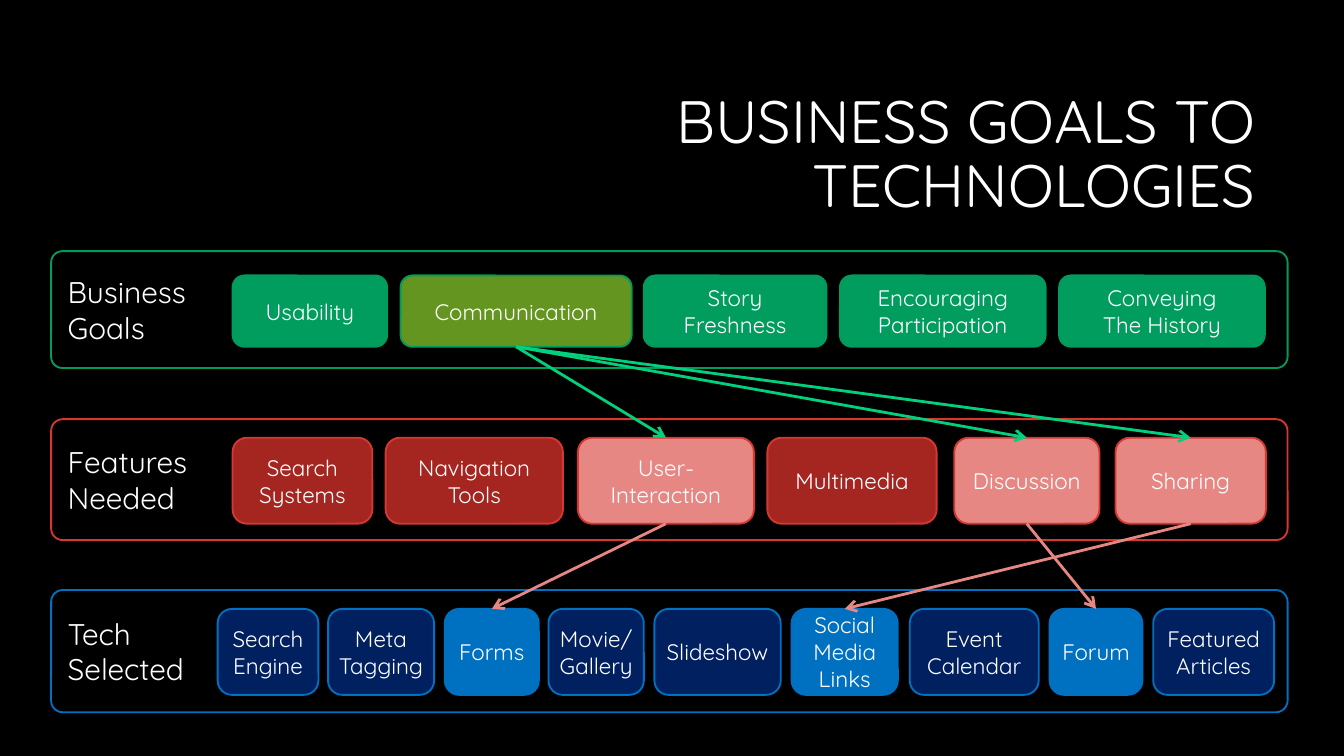
"""Build a slide that maps business goals to features and technologies."""
from dataclasses import dataclass

from lxml import etree
from pptx import Presentation
from pptx.dml.color import RGBColor
from pptx.enum import shapes, text
from pptx.oxml import ns
from pptx.util import Pt

FONT = "Quicksand"
BLACK = RGBColor(0x00, 0x00, 0x00)
WHITE = RGBColor(0xFF, 0xFF, 0xFF)
GREEN = RGBColor(0x01, 0x9D, 0x5E)
GREEN_LINE = RGBColor(0x01, 0x9B, 0x5C)
OLIVE = RGBColor(0x63, 0x95, 0x20)
MINT = RGBColor(0x01, 0xD1, 0x7D)
RED = RGBColor(0xA5, 0x26, 0x21)
RED_LINE = RGBColor(0xD6, 0x37, 0x31)
PINK = RGBColor(0xE6, 0x87, 0x83)
NAVY = RGBColor(0x00, 0x20, 0x60)
BLUE = RGBColor(0x00, 0x70, 0xC0)

FRAME_LEFT, FRAME_WIDTH = 27.4, 662.4
BOTTOM, TOP = 2, 0


@dataclass(frozen=True)
class Box:
    label: str
    left: float
    width: float
    selected: bool = False


@dataclass(frozen=True)
class Row:
    label: str
    top: float
    height: float
    box_top: float
    box_height: float
    inset: float
    line: RGBColor
    fill: RGBColor
    selected_fill: RGBColor
    boxes: tuple[Box, ...]


@dataclass(frozen=True)
class Link:
    source: str
    target: str
    color: RGBColor


ROWS = (
    Row("Business\nGoals", 134.6, 62.6, 147.6, 38.2, 7.2, GREEN_LINE, GREEN, OLIVE, (
        Box("Usability", 124.6, 82.8),
        Box("Communication", 214.6, 123.8, True),
        Box("Story\nFreshness", 344.9, 97.9),
        Box("Encouraging Participation", 450, 110.2),
        Box("Conveying\nThe History", 567.4, 110.2),
    )),
    Row("Features\nNeeded", 224.6, 64.8, 234.5, 46.1, 7.2, RED_LINE, RED, PINK, (
        Box("Search\nSystems", 124.6, 74.9),
        Box("Navigation\nTools", 206.6, 95),
        Box("User-Interaction", 309.6, 94.3, True),
        Box("Multimedia", 411.1, 90.7),
        Box("Discussion", 511.2, 77.8, True),
        Box("Sharing", 597.6, 80.6, True),
    )),
    Row("Tech\nSelected", 316.1, 65.5, 326.2, 46.1, 0, BLUE, NAVY, BLUE, (
        Box("Search Engine", 116.6, 54),
        Box("Meta\nTagging", 175.7, 56.9),
        Box("Forms", 238.3, 50.4, True),
        Box("Movie/\nGallery", 293.8, 51.1),
        Box("Slideshow", 350.6, 67.7),
        Box("Social Media\nLinks", 424.1, 56.9, True),
        Box("Event\nCalendar", 487.4, 69.1),
        Box("Forum", 562.3, 49.7, True),
        Box("Featured\nArticles", 617.8, 64.8),
    )),
)

LINKS = (
    Link("Communication", "User-Interaction", MINT),
    Link("Communication", "Discussion", MINT),
    Link("Communication", "Sharing", MINT),
    Link("User-Interaction", "Forms", PINK),
    Link("Discussion", "Forum", PINK),
    Link("Sharing", "Social Media\nLinks", PINK),
)


def write_text(shape, label: str, size: float, alignment, inset: float = 7.2) -> None:
    """Fill a shape with vertically centred white text."""
    frame = shape.text_frame
    frame.word_wrap = True
    frame.vertical_anchor = text.MSO_ANCHOR.MIDDLE
    frame.margin_left = frame.margin_right = Pt(inset)
    frame.margin_top = frame.margin_bottom = Pt(3.6)
    frame.text = label
    for paragraph in frame.paragraphs:
        paragraph.alignment = alignment
        paragraph.font.name = FONT
        paragraph.font.size = Pt(size)
        paragraph.font.color.rgb = WHITE


def add_rounded(slide, left: float, top: float, width: float, height: float, line: RGBColor):
    """Add a rounded rectangle with a thin outline and no shadow."""
    shape = slide.shapes.add_shape(
        shapes.MSO_SHAPE.ROUNDED_RECTANGLE, Pt(left), Pt(top), Pt(width), Pt(height))
    shape.shadow.inherit = False
    shape.line.color.rgb = line
    shape.line.width = Pt(1)
    return shape


def add_row(slide, row: Row) -> dict:
    """Draw a framed row and return its boxes by label."""
    frame = add_rounded(slide, FRAME_LEFT, row.top, FRAME_WIDTH, row.height, row.line)
    frame.adjustments[0] = 0.096
    frame.fill.background()
    write_text(frame, row.label, 16, text.PP_ALIGN.LEFT)
    drawn = {}
    for box in row.boxes:
        shape = add_rounded(slide, box.left, row.box_top, box.width, row.box_height, row.line)
        shape.fill.solid()
        shape.fill.fore_color.rgb = row.selected_fill if box.selected else row.fill
        write_text(shape, box.label, 12, text.PP_ALIGN.CENTER, row.inset)
        drawn[box.label] = shape
    return drawn


def add_link(slide, link: Link, boxes: dict) -> None:
    """Draw an arrow from the bottom of one box to the top of another."""
    connector = slide.shapes.add_connector(shapes.MSO_CONNECTOR.STRAIGHT, 0, 0, 0, 0)
    connector.begin_connect(boxes[link.source], BOTTOM)
    connector.end_connect(boxes[link.target], TOP)
    connector.line.color.rgb = link.color
    connector.line.width = Pt(1.5)
    etree.SubElement(connector.line._get_or_add_ln(), ns.qn("a:tailEnd"), type="arrow")
    etree.SubElement(connector._element.spPr, ns.qn("a:effectLst"))


def add_title(slide) -> None:
    """Add the right-aligned slide title."""
    title = slide.shapes.add_textbox(Pt(171.4), Pt(45.4), Pt(508.3), Pt(76.3))
    write_text(title, "BUSINESS GOALS TO TECHNOLOGIES", 32, text.PP_ALIGN.RIGHT)
    title.text_frame.paragraphs[0].line_spacing = 0.9


def main() -> None:
    """Build and save the presentation."""
    presentation = Presentation()
    presentation.slide_width, presentation.slide_height = Pt(720), Pt(405)
    slide = presentation.slides.add_slide(presentation.slide_layouts[6])
    slide.background.fill.solid()
    slide.background.fill.fore_color.rgb = BLACK
    add_title(slide)
    boxes = {}
    for row in ROWS:
        boxes.update(add_row(slide, row))
    for link in LINKS:
        add_link(slide, link, boxes)
    presentation.save("out.pptx")


if __name__ == "__main__":
    main()
